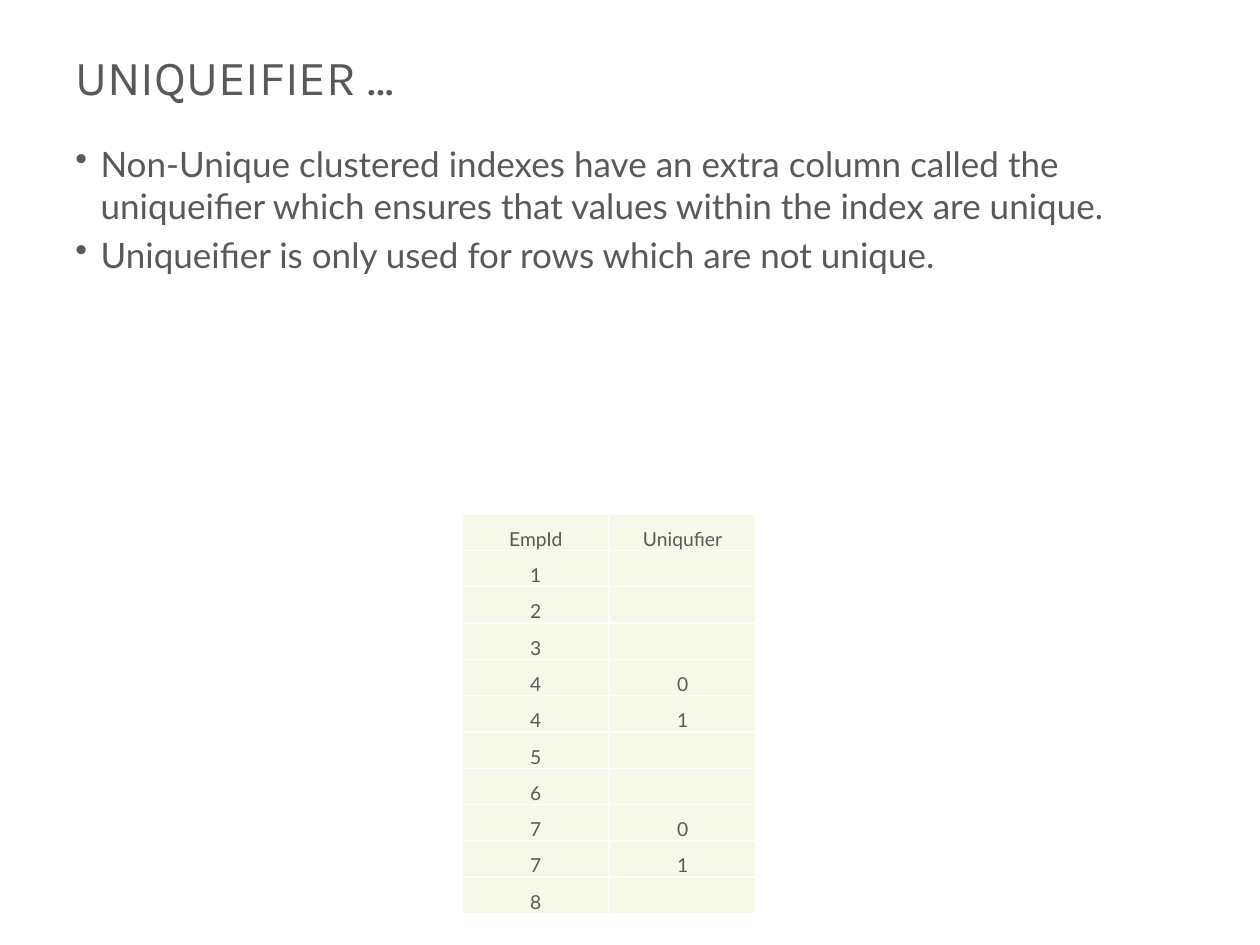
from dataclasses import dataclass

import pptx
import pptx.dml.color
import pptx.enum.text
import pptx.oxml
import pptx.oxml.ns
import pptx.util
from lxml import etree

WIDTH = pptx.util.Inches(10)
HEIGHT = pptx.util.Inches(7.5)
GREY = pptx.dml.color.RGBColor(0x59, 0x59, 0x59)
CREAM = pptx.dml.color.RGBColor(0xF6, 0xF9, 0xEA)
WHITE = pptx.dml.color.RGBColor(0xFF, 0xFF, 0xFF)
MIDDLE = pptx.enum.text.MSO_ANCHOR.MIDDLE
TOP = pptx.enum.text.MSO_ANCHOR.TOP

BULLETS = (
    "Non-Unique clustered indexes have an extra column called the "
    "uniqueifier which ensures that values within the index are unique.",
    "Uniqueifier is only used for rows which are not unique.",
)
ROWS = (
    ("EmpId", "Uniqufier"),
    ("1", ""),
    ("2", ""),
    ("3", ""),
    ("4", "0"),
    ("4", "1"),
    ("5", ""),
    ("6", ""),
    ("7", "0"),
    ("7", "1"),
    ("8", ""),
)


@dataclass(frozen=True)
class Area:
    left: float
    top: float
    width: float
    height: float

    def lengths(self) -> tuple[int, int, int, int]:
        return (
            round(self.left * WIDTH),
            round(self.top * HEIGHT),
            round(self.width * WIDTH),
            round(self.height * HEIGHT),
        )


@dataclass(frozen=True)
class TextBlock:
    area: Area
    lines: tuple[str, ...]
    font: str
    size: int
    anchor: pptx.enum.text.MSO_ANCHOR
    bulleted: bool = False


BLOCKS = (
    TextBlock(Area(0.05, 0.04, 0.9, 0.08), ("UNIQUEIFIER …",), "Karla", 28, MIDDLE),
    TextBlock(Area(0.05, 0.144, 0.9, 0.756), BULLETS, "Lato", 20, TOP, True),
)
TABLE_AREA = Area(0.367, 0.544, 0.233, 0.423)


def add_span(para, text: str, font: str, size: int) -> None:
    span = para.add_run()
    span.text = text
    span.font.name = font
    span.font.size = pptx.util.Pt(size)
    span.font.color.rgb = GREY


def add_bullet(para) -> None:
    properties = para._p.get_or_add_pPr()
    indent = pptx.util.Inches(0.2)
    properties.set("marL", str(indent))
    properties.set("indent", str(-indent))
    bullet = etree.SubElement(properties, pptx.oxml.ns.qn("a:buChar"))
    bullet.set("char", "•")


def draw_text(page, block: TextBlock) -> None:
    box = page.shapes.add_textbox(*block.area.lengths())
    frame = box.text_frame
    frame.word_wrap = True
    frame.vertical_anchor = block.anchor
    for index, line in enumerate(block.lines):
        para = frame.add_paragraph() if index else frame.paragraphs[0]
        if block.bulleted:
            add_bullet(para)
        if index:
            para.space_before = pptx.util.Pt(block.size * 0.2)
        add_span(para, line, block.font, block.size)


def add_borders(cell) -> None:
    properties = cell._tc.get_or_add_tcPr()
    for side in ("lnL", "lnR", "lnT", "lnB"):
        properties.append(pptx.oxml.parse_xml(
            f'<a:{side} {pptx.oxml.ns.nsdecls("a")} w="{pptx.util.Pt(1)}">'
            f'<a:solidFill><a:srgbClr val="{WHITE}"/></a:solidFill></a:{side}>'
        ))


def fill_cell(cell, text: str) -> None:
    cell.margin_left = cell.margin_right = cell.margin_top = pptx.util.Inches(0.01)
    cell.margin_bottom = 0
    cell.vertical_anchor = pptx.enum.text.MSO_ANCHOR.BOTTOM
    add_borders(cell)
    cell.fill.solid()
    cell.fill.fore_color.rgb = CREAM
    para = cell.text_frame.paragraphs[0]
    para.alignment = pptx.enum.text.PP_ALIGN.CENTER
    if text:
        add_span(para, text, "Lato", 11)
    else:
        ending = etree.SubElement(para._p, pptx.oxml.ns.qn("a:endParaRPr"))
        ending.set("sz", "1100")


def draw_table(page, area: Area, rows: tuple[tuple[str, ...], ...]) -> None:
    left, top, width, height = area.lengths()
    table = page.shapes.add_table(
        len(rows), len(rows[0]), left, top, width, height
    ).table
    table.first_row = False
    table.horz_banding = False
    for column in table.columns:
        column.width = width // len(rows[0])
    for row, values in zip(table.rows, rows):
        row.height = height // len(rows)
        for cell, value in zip(row.cells, values):
            fill_cell(cell, value)


def main() -> None:
    deck = pptx.Presentation()
    deck.slide_width = WIDTH
    deck.slide_height = HEIGHT
    page = deck.slides.add_slide(deck.slide_layouts[6])
    page.background.fill.solid()
    page.background.fill.fore_color.rgb = WHITE
    for block in BLOCKS:
        draw_text(page, block)
    draw_table(page, TABLE_AREA, ROWS)
    deck.save("out.pptx")


if __name__ == "__main__":
    main()
